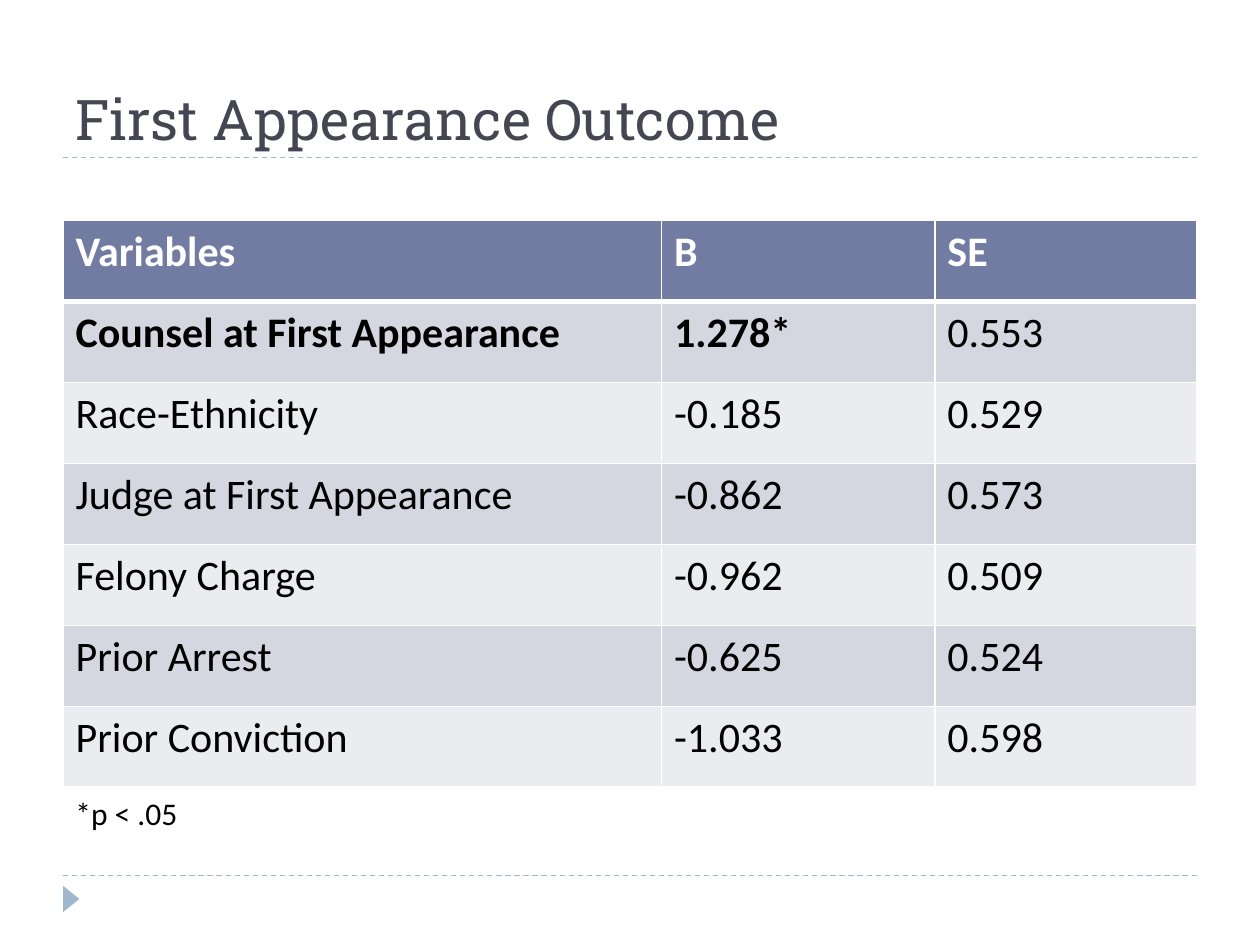
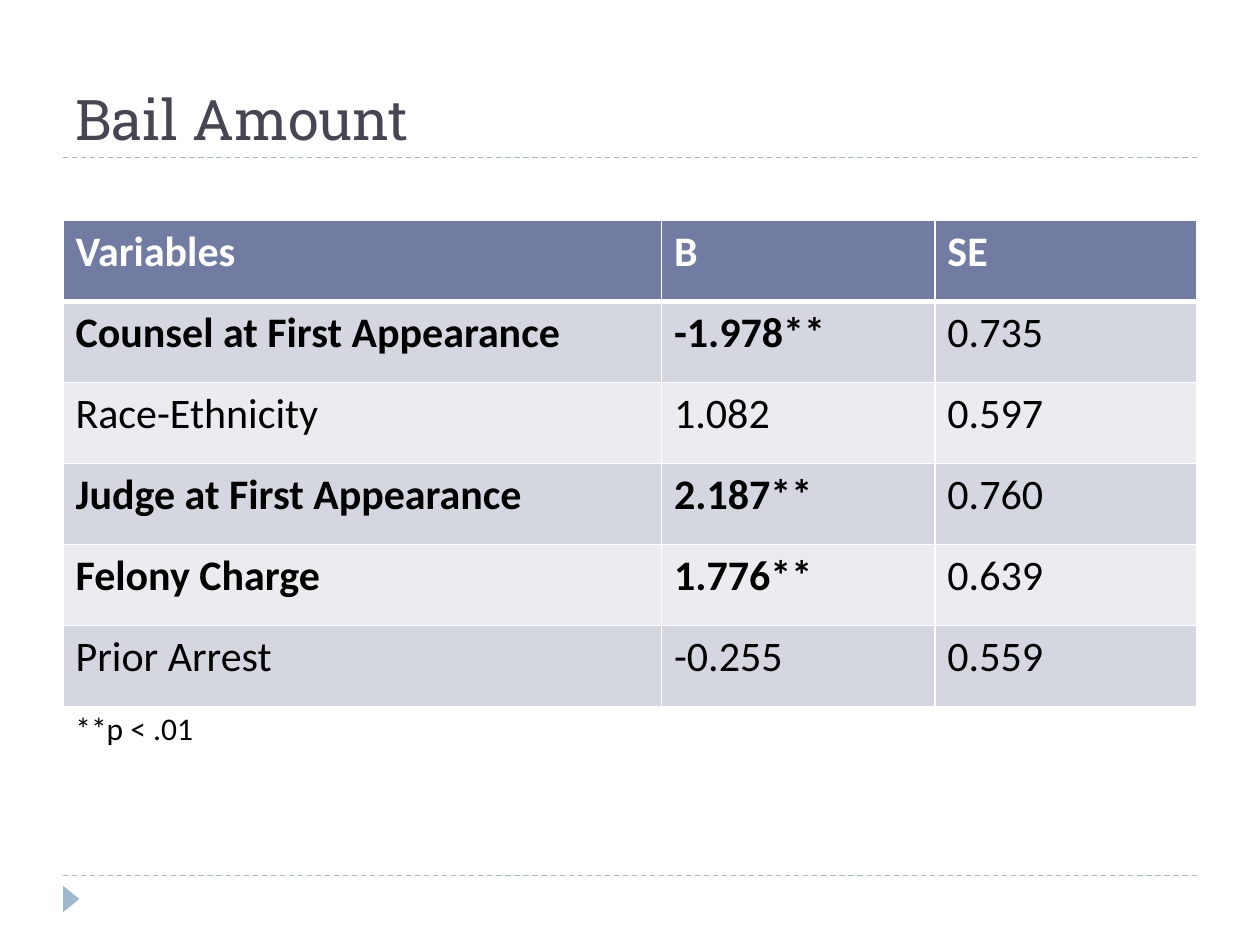
from lxml.etree import SubElement
from pptx import Presentation
from pptx.dml.color import RGBColor
from pptx.enum.dml import MSO_LINE
from pptx.enum.shapes import MSO_CONNECTOR, MSO_SHAPE
from pptx.enum.text import MSO_ANCHOR
from pptx.oxml.ns import qn
from pptx.util import Inches, Pt

COLORS = {
    "title": "464653",
    "accent": "9FB8CD",
    "header": "727CA3",
    "odd_row": "D5D7E0",
    "even_row": "EBECF0",
    "white": "FFFFFF",
    "black": "000000",
}
TITLE_FONT, BODY_FONT = "Roboto Slab", "Calibri"
LEFT, WIDTH = 0.5, 9
TITLE_TOP, TITLE_HEIGHT = 0.17, 1.08
RULE_TOPS = (6.95, TITLE_TOP + TITLE_HEIGHT)
TABLE_TOP, ROW_HEIGHT = 1.75, 4.5 / 7
COLUMN_WIDTHS = (4.75, 2.17, 2.08)
HEADINGS = ("Variables", "B", "SE")

# Title, coefficient rows, significance note, top of the note
RESULTS = [
    ("First Appearance Outcome", [
        ("Counsel at First Appearance", "1.278*", "0.553"),
        ("Race-Ethnicity", "-0.185", "0.529"),
        ("Judge at First Appearance", "-0.862", "0.573"),
        ("Felony Charge", "-0.962", "0.509"),
        ("Prior Arrest", "-0.625", "0.524"),
        ("Prior Conviction", "-1.033", "0.598"),
    ], "*p < .05", 6.25),
    ("Bail Amount", [
        ("Counsel at First Appearance", "-1.978**", "0.735"),
        ("Race-Ethnicity", "1.082", "0.597"),
        ("Judge at First Appearance", "2.187**", "0.760"),
        ("Felony Charge", "1.776**", "0.639"),
        ("Prior Arrest", "-0.255", "0.559"),
    ], "**p < .01", 5.58),
]


def color(name):
    return RGBColor.from_string(COLORS[name])


def write(text_frame, text, font_name, size, color_name, bold=False):
    text_frame.text = text
    font = text_frame.paragraphs[0].runs[0].font
    font.name, font.size, font.bold = font_name, Pt(size), bold
    font.color.rgb = color(color_name)


def add_text(slide, box, text, font_name, size, color_name, anchor=MSO_ANCHOR.TOP):
    text_frame = slide.shapes.add_textbox(*map(Inches, box)).text_frame
    text_frame.word_wrap = True
    text_frame.vertical_anchor = anchor
    write(text_frame, text, font_name, size, color_name)


def add_rule(slide, left, top, width):
    rule = slide.shapes.add_connector(
        MSO_CONNECTOR.STRAIGHT, Inches(left), Inches(top), Inches(left + width), Inches(top))
    rule.line.color.rgb = color("accent")
    rule.line.width = Pt(0.75)
    rule.line.dash_style = MSO_LINE.DASH
    SubElement(rule._element.spPr, qn("a:effectLst"))


def add_frame(slide, title):
    """Add the title, both dashed rules and the footer marker."""
    for top in RULE_TOPS:
        add_rule(slide, LEFT, top, WIDTH)
    marker = slide.shapes.add_shape(
        MSO_SHAPE.ISOSCELES_TRIANGLE, Inches(0.46), Inches(7.07), Inches(0.21), Inches(0.13))
    marker.rotation = 90
    marker.shadow.inherit = False
    marker.fill.solid()
    marker.fill.fore_color.rgb = color("accent")
    marker.line.fill.background()
    add_text(slide, (LEFT, TITLE_TOP, WIDTH, TITLE_HEIGHT), title,
             TITLE_FONT, 32, "title", MSO_ANCHOR.BOTTOM)


def set_borders(cell, top=1, bottom=1):
    properties = cell._tc.get_or_add_tcPr()
    for side, width in (("L", 1), ("R", 1), ("T", top), ("B", bottom)):
        line = SubElement(properties, qn(f"a:ln{side}"), w=str(Pt(width)))
        fill = SubElement(line, qn("a:solidFill"))
        SubElement(fill, qn("a:srgbClr"), val=COLORS["white"])


def format_cell(cell, text, row_index, bold):
    is_header = row_index == 0
    set_borders(cell, top=3 if row_index == 1 else 1, bottom=3 if is_header else 1)
    fill_name = "header" if is_header else "odd_row" if row_index % 2 else "even_row"
    cell.fill.solid()
    cell.fill.fore_color.rgb = color(fill_name)
    write(cell.text_frame, text, BODY_FONT, 24, "white" if is_header else "black", bold)


def add_coefficient_table(slide, left, top, width, coefficients):
    """Add the table; starred coefficients and their names are bold."""
    rows = [HEADINGS, *coefficients]
    table = slide.shapes.add_table(
        len(rows), len(HEADINGS), Inches(left), Inches(top),
        Inches(width), Inches(ROW_HEIGHT * len(rows))).table
    for column, column_width in zip(table.columns, COLUMN_WIDTHS):
        column.width = Inches(column_width)
    for row_index, values in enumerate(rows):
        table.rows[row_index].height = Inches(ROW_HEIGHT)
        significant = "*" in values[1]
        for column_index, value in enumerate(values):
            bold = row_index == 0 or (significant and column_index < 2)
            format_cell(table.cell(row_index, column_index), value, row_index, bold)


def add_result_slide(presentation, title, coefficients, note, note_top):
    slide = presentation.slides.add_slide(presentation.slide_layouts[6])
    add_frame(slide, title)
    add_coefficient_table(slide, LEFT, TABLE_TOP, WIDTH, coefficients)
    add_text(slide, (LEFT, note_top, 1.67, 0.4), note, BODY_FONT, 18, "black")


def main():
    presentation = Presentation()
    presentation.slide_width, presentation.slide_height = Inches(10), Inches(7.5)
    for result in RESULTS:
        add_result_slide(presentation, *result)
    presentation.save("out.pptx")


if __name__ == "__main__":
    main()
